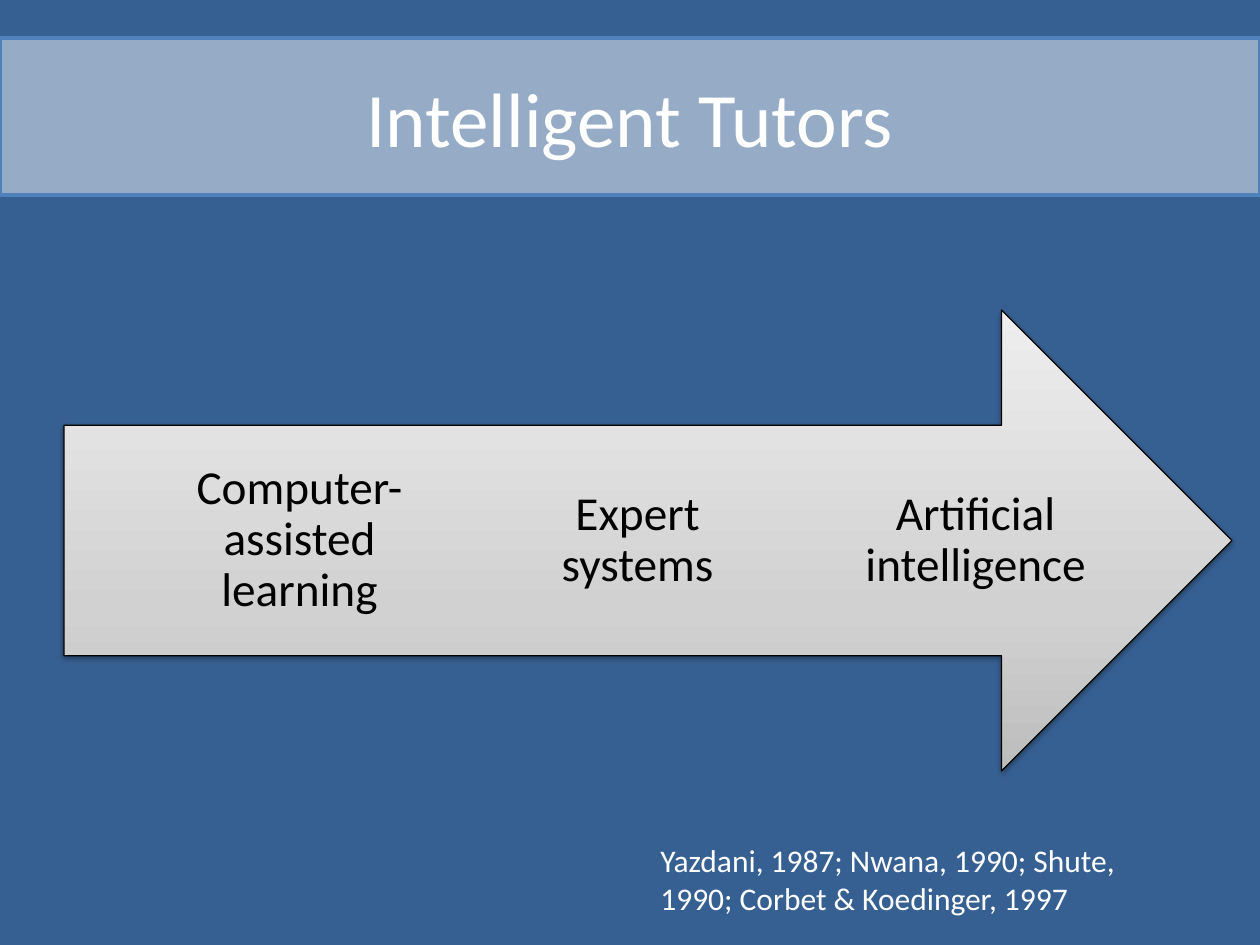
from copy import deepcopy

from pptx import Presentation
from pptx.dml.color import RGBColor
from pptx.enum.shapes import MSO_SHAPE
from pptx.enum.text import MSO_ANCHOR, PP_ALIGN
from pptx.oxml import parse_xml
from pptx.oxml.ns import nsdecls, qn
from pptx.util import Emu, Pt

FONT = "Calibri"
WHITE, BLACK = "FFFFFF", "000000"
STAGES = ["Computer-assisted learning", "Expert systems", "Artificial intelligence"]
CITATION = "Yazdani, 1987; Nwana, 1990; Shute, 1990; Corbet & Koedinger, 1997"


def px(n):
    return Emu(round(n * 914400 / 126))


def rgb(value):
    return RGBColor.from_string(value)


def place(sp, x, y, w, h):
    sp.left, sp.top, sp.width, sp.height = px(x), px(y), px(w), px(h)


def write(sp, text, size, color, align=PP_ALIGN.LEFT, anchor=MSO_ANCHOR.TOP):
    tf = sp.text_frame
    tf.text = text
    tf.word_wrap = True
    tf.vertical_anchor = anchor
    p = tf.paragraphs[0]
    p.alignment = align
    p.font.name, p.font.size = FONT, Pt(size)
    p.font.color.rgb = rgb(color)
    return tf


def add_title(s, x, y, w, h):
    sp = s.shapes.title
    place(sp, x, y, w, h)
    sp.fill.solid()
    sp.fill.fore_color.rgb = rgb(WHITE)
    tint = sp.fill._xPr.find(".//" + qn("a:srgbClr"))
    tint.append(parse_xml(f'<a:alpha {nsdecls("a")} val="48000"/>'))
    sp.line.color.rgb = rgb("4F81BD")
    sp.line.width = Pt(2)
    write(sp, "Intelligent Tutors", 44, WHITE, PP_ALIGN.CENTER, MSO_ANCHOR.MIDDLE)


def style_arrow(sp):
    """Give the arrow its three-stop gradient, outline and soft shadow."""
    sp.fill.gradient()
    sp.fill.gradient_angle = 90
    stops = sp._element.spPr.find(".//" + qn("a:gsLst"))
    stops.append(deepcopy(stops[-1]))
    colors = [(0, "BDBDBD"), (0.35, "D1D1D1"), (1, "EEEEEE")]
    for stop, (position, color) in zip(sp.fill.gradient_stops, colors):
        stop.position = position
        stop.color.rgb = rgb(color)
    sp.line.color.rgb = rgb(BLACK)
    sp.line.width = Pt(0.75)
    sp.shadow.inherit = False
    sp._element.spPr.find(qn("a:effectLst")).append(parse_xml(
        f'<a:outerShdw {nsdecls("a")} blurRad="{Pt(3.1)}" dist="{Pt(1.6)}" '
        'dir="5400000" rotWithShape="0"><a:srgbClr val="000000">'
        '<a:alpha val="38000"/></a:srgbClr></a:outerShdw>'))


def add_process(s, x, y, w, h):
    group = s.shapes.add_group_shape()
    arrow = group.shapes.add_shape(
        MSO_SHAPE.RIGHT_ARROW, px(x), px(y), px(w), px(h))
    style_arrow(arrow)
    label_w, step = 281, 338
    for i, stage in enumerate(STAGES):
        sp = group.shapes.add_textbox(
            px(x + 95 + i * step), px(y + h / 4), px(label_w), px(h / 2))
        tf = write(sp, stage, 27, BLACK, PP_ALIGN.CENTER, MSO_ANCHOR.MIDDLE)
        tf.margin_left = tf.margin_right = 0
        tf.margin_top = tf.margin_bottom = px(38)
        tf.paragraphs[0].line_spacing = 0.9


def add_citation(s, x, y, w, h):
    sp = s.shapes.add_textbox(px(x), px(y), px(w), px(h))
    write(sp, CITATION, 18, WHITE)


def main():
    prs = Presentation()
    prs.slide_width, prs.slide_height = px(1260), px(945)
    s = prs.slides.add_slide(prs.slide_layouts[5])
    s.background.fill.solid()
    s.background.fill.fore_color.rgb = rgb("376092")
    add_title(s, 0, 38, 1260, 157)
    add_process(s, 64, 310, 1168, 461)
    add_citation(s, 648, 835, 510, 89)
    prs.save("out.pptx")


if __name__ == "__main__":
    main()
